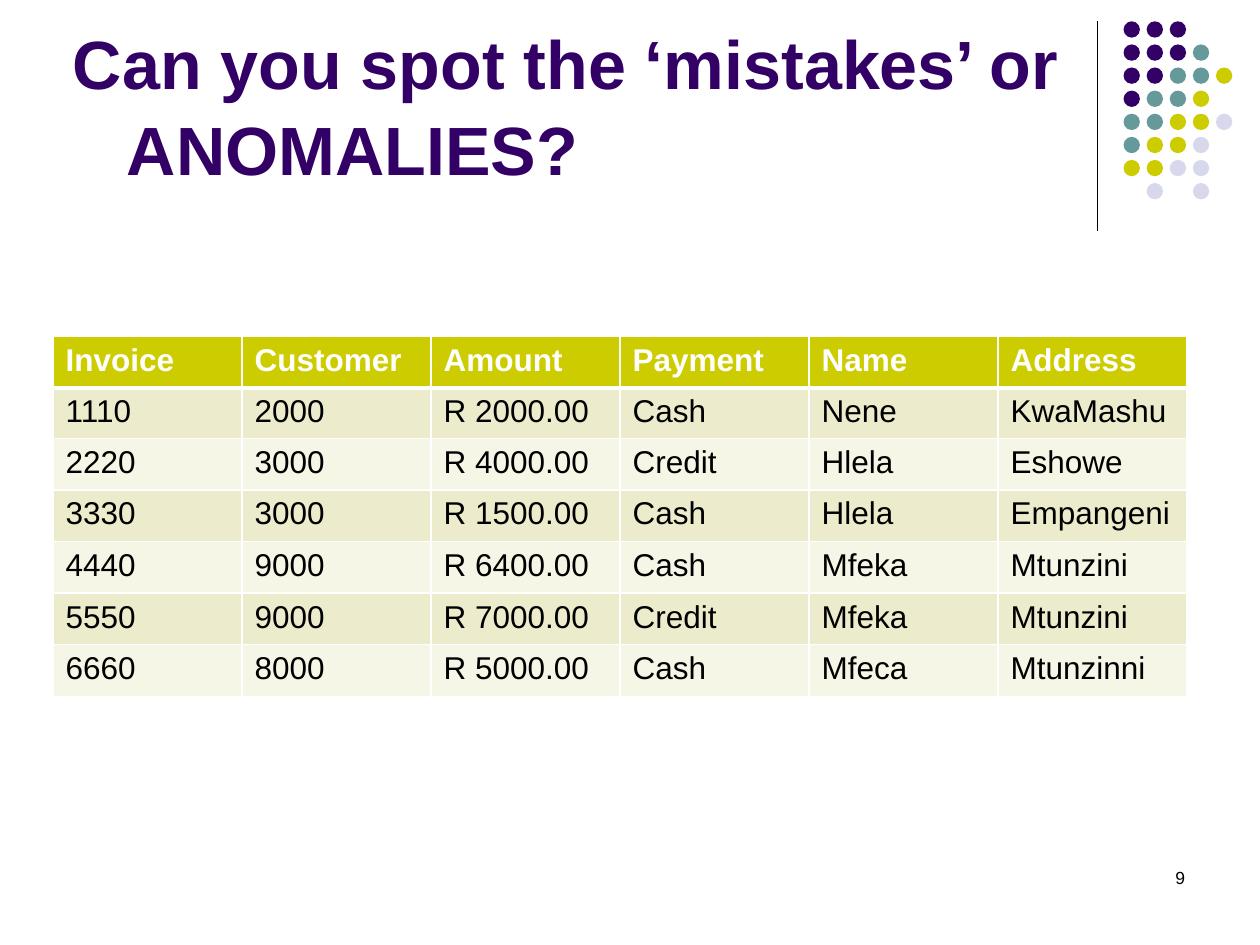
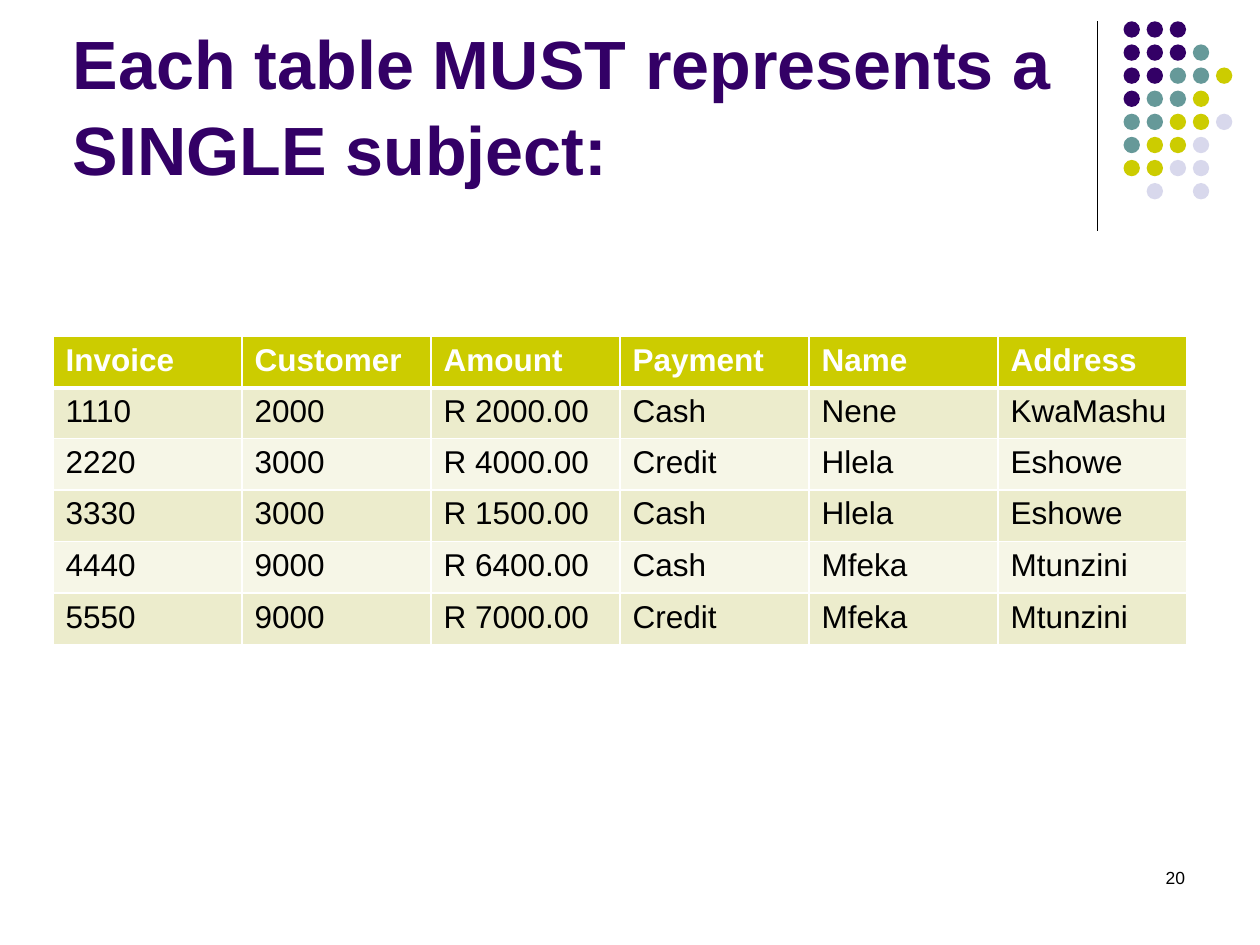
from lxml import etree
from pptx import Presentation
from pptx.dml.color import RGBColor
from pptx.enum.shapes import MSO_CONNECTOR, MSO_SHAPE
from pptx.enum.text import MSO_ANCHOR, PP_ALIGN
from pptx.oxml import parse_xml
from pptx.oxml.ns import nsdecls, qn
from pptx.util import Cm, Pt

STRAIGHT = MSO_CONNECTOR.STRAIGHT
ELLIPSE = MSO_SHAPE.OVAL
BOTTOM = MSO_ANCHOR.BOTTOM
TOP = MSO_ANCHOR.TOP
LEFT = PP_ALIGN.LEFT
RIGHT = PP_ALIGN.RIGHT

PURPLE, TEAL, LIME, LILAC = "330066", "669999", "CCCC00", "D8D8EC"
BLACK, WHITE = "000000", "FFFFFF"
BANDS = ["ECECCC", "F6F6E7"]

# One letter per dot, a point where the grid is empty
DOT_ROWS = ["PPP..", "PPPT.", "PPTTL", "PTTL.", "TTLLI", "TLLI.", "LLII.", ".I.I."]
DOT_COLOURS = {"P": PURPLE, "T": TEAL, "L": LIME, "I": LILAC}
DOT_SIZE = 0.33
DOT_STEP = 3.26 / 7

TITLE_FORMAT = {"size": Pt(39), "bold": True}
NUMBER_FORMAT = {"size": Pt(10), "bold": False}
HEADER_FORMAT = {"size": Pt(18), "bold": True}
BODY_FORMAT = {"size": Pt(18), "bold": False}

HEADER = ["Invoice", "Customer", "Amount", "Payment", "Name", "Address"]
SHARED_START = [
    ["1110", "2000", "R 2000.00", "Cash", "Nene", "KwaMashu"],
    ["2220", "3000", "R 4000.00", "Credit", "Hlela", "Eshowe"],
]
SHARED_END = [
    ["4440", "9000", "R 6400.00", "Cash", "Mfeka", "Mtunzini"],
    ["5550", "9000", "R 7000.00", "Credit", "Mfeka", "Mtunzini"],
]
THIRD_INVOICE = ["3330", "3000", "R 1500.00", "Cash", "Hlela"]
MISSPELT_INVOICE = ["6660", "8000", "R 5000.00", "Cash", "Mfeca", "Mtunzinni"]

PAGES = [
    {
        "title": "Can you spot the ‘mistakes’ or ANOMALIES?",
        "hanging": 1.09,
        "number": "9",
        "invoices": SHARED_START + [THIRD_INVOICE + ["Empangeni"]]
        + SHARED_END + [MISSPELT_INVOICE],
    },
    {
        "title": "Each table MUST represents a SINGLE subject:",
        "hanging": 0,
        "number": "20",
        "invoices": SHARED_START + [THIRD_INVOICE + ["Eshowe"]] + SHARED_END,
    },
]


def colour(code):
    return RGBColor.from_string(code)


def write(frame, text, font_format, text_colour, align=LEFT):
    """Put one formatted span in the frame and return its paragraph."""
    frame.word_wrap = True
    para = frame.paragraphs[0]
    para.alignment = align
    span = para.add_run()
    span.text = text
    span.font.name = "Arial"
    span.font.color.rgb = colour(text_colour)
    for name, value in font_format.items():
        setattr(span.font, name, value)
    return para


deck = Presentation()
deck.slide_width = Cm(25.4)
deck.slide_height = Cm(19.05)

for content in PAGES:
    page = deck.slides.add_slide(deck.slide_layouts[6])

    # Corner decoration
    rule = page.shapes.add_connector(STRAIGHT, Cm(22.12), Cm(0.43), Cm(22.12), Cm(4.65))
    rule.line.color.rgb = colour(BLACK)
    rule.line.width = Pt(0.75)
    etree.SubElement(rule._element.spPr, qn("a:effectLst"))
    for row, letters in enumerate(DOT_ROWS):
        for column, letter in enumerate(letters):
            if letter == ".":
                continue
            dot = page.shapes.add_shape(
                ELLIPSE, Cm(22.65 + column * DOT_STEP), Cm(0.43 + row * DOT_STEP),
                Cm(DOT_SIZE), Cm(DOT_SIZE))
            dot.shadow.inherit = False
            dot.fill.solid()
            dot.fill.fore_color.rgb = colour(DOT_COLOURS[letter])
            dot.line.fill.background()

    # Title and page number
    title_box = page.shapes.add_textbox(Cm(1.27), Cm(0.33), Cm(20.95), Cm(3.6))
    title_frame = title_box.text_frame
    title_frame.vertical_anchor = BOTTOM
    title_frame.margin_left = Cm(0.2)
    title_para = write(title_frame, content["title"], TITLE_FORMAT, PURPLE)
    title_para.line_spacing = 1.05
    hanging = Cm(content["hanging"])
    title_properties = title_para._p.get_or_add_pPr()
    title_properties.set("marL", str(hanging))
    title_properties.set("indent", str(-hanging))

    number_box = page.shapes.add_textbox(Cm(20.96), Cm(17.35), Cm(3.18), Cm(1.27))
    write(number_box.text_frame, content["number"], NUMBER_FORMAT, BLACK, RIGHT)

    # Invoice table
    rows = [HEADER] + content["invoices"]
    heights = [0.97 if index == 1 else 1.04 for index in range(len(rows))]
    table = page.shapes.add_table(
        len(rows), len(HEADER), Cm(1.07), Cm(6.78), Cm(22.86), Cm(sum(heights))).table
    for column in table.columns:
        column.width = Cm(3.81)
    for index, texts in enumerate(rows):
        table.rows[index].height = Cm(heights[index])
        is_header = index == 0
        border_widths = {
            "lnL": 1, "lnR": 1,
            "lnT": 3 if index == 1 else 1,
            "lnB": 3 if is_header else 1,
        }
        for cell, text in zip(table.rows[index].cells, texts):
            for side, width in border_widths.items():
                cell._tc.get_or_add_tcPr().append(parse_xml(
                    f'<a:{side} {nsdecls("a")} w="{Pt(width)}"><a:solidFill>'
                    f'<a:srgbClr val="{WHITE}"/></a:solidFill></a:{side}>'))
            cell.fill.solid()
            cell.fill.fore_color.rgb = colour(LIME if is_header else BANDS[(index - 1) % 2])
            cell.vertical_anchor = TOP
            write(cell.text_frame, text, HEADER_FORMAT if is_header else BODY_FORMAT,
                  WHITE if is_header else BLACK)

deck.save("out.pptx")
